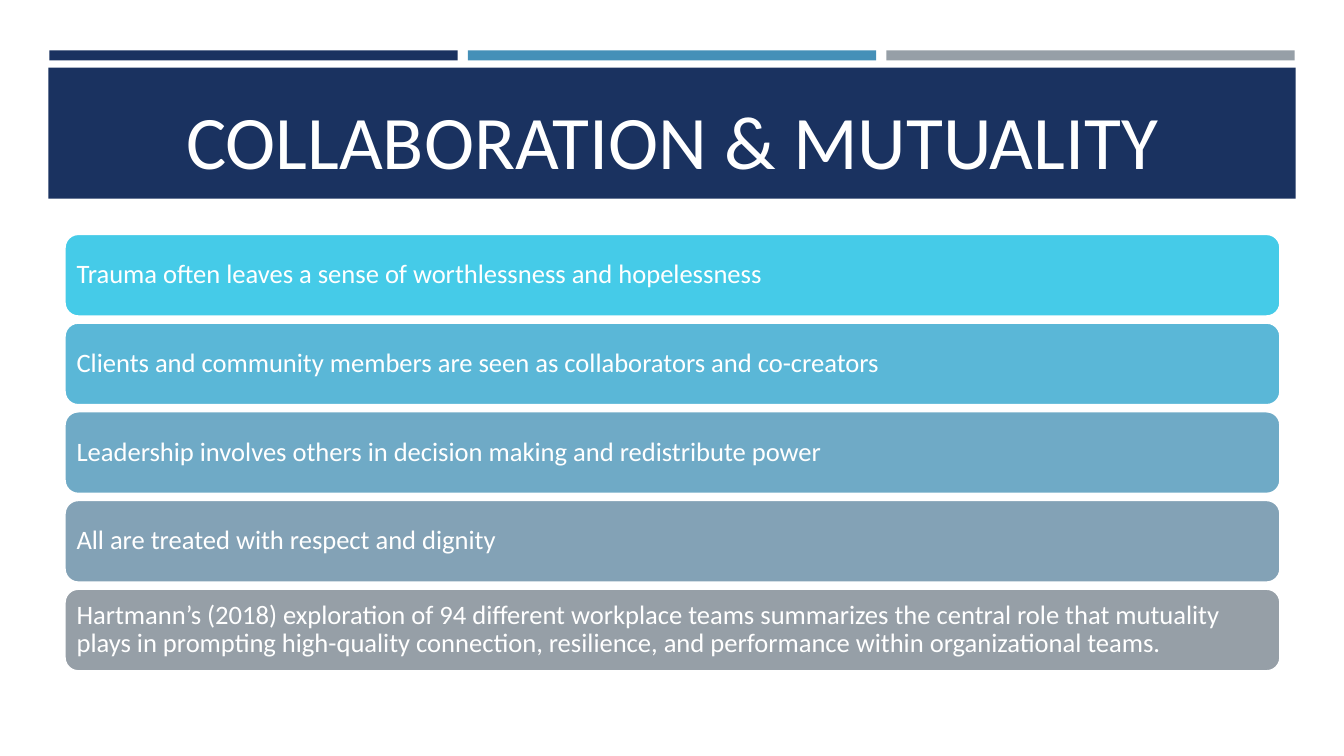
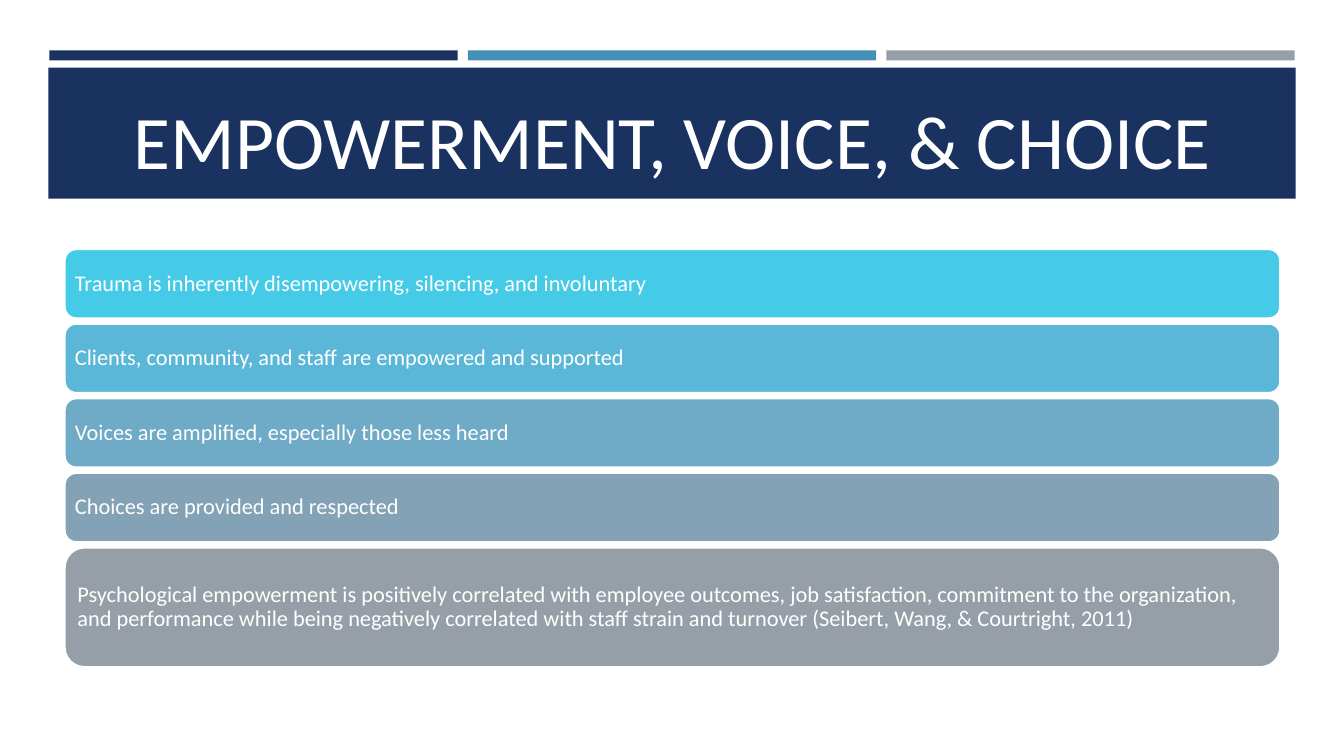
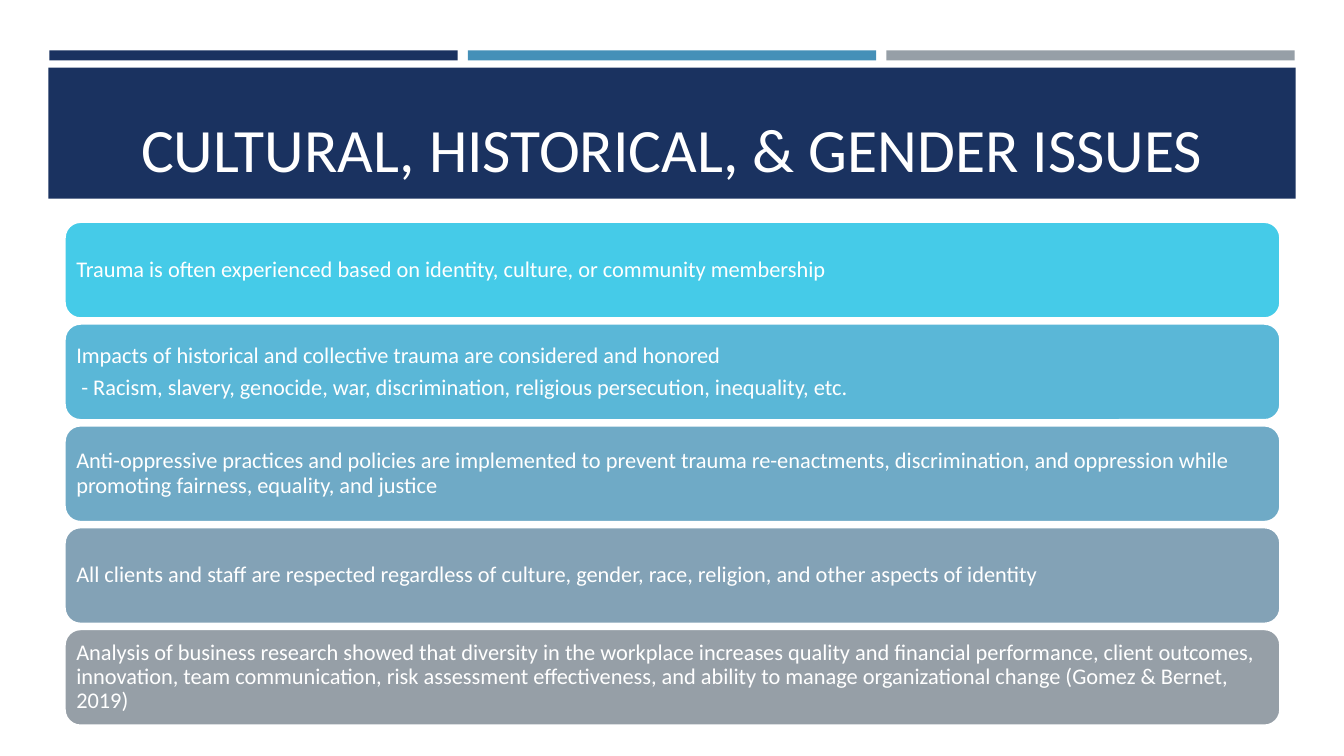
from pptx import Presentation
from pptx.dml.color import RGBColor as Rgb
from pptx.enum.shapes import MSO_SHAPE as Kind
from pptx.enum.text import MSO_ANCHOR as Anchor, MSO_AUTO_SIZE as Fit, PP_ALIGN as Align
from pptx.util import Pt

PX = 9144


class Theme:
    font = "Calibri"
    navy = "1A3260"
    blue = "4590B8"
    gray = "969FA7"
    white = "FFFFFF"
    cards = ["45CBE8", "5AB7D7", "6FAAC6", "83A2B6", "969FA7"]
    big = 54
    mid = 44
    text = 19
    small = 16


def draw(slide, kind, box, fill):
    shape = slide.shapes.add_shape(kind, *[n * PX for n in box])
    shape.shadow.inherit = False
    shape.fill.solid()
    shape.fill.fore_color.rgb = Rgb.from_string(fill)
    shape.line.fill.background()
    return shape


def style(part, size):
    part.font.name = Theme.font
    part.font.size = Pt(size)
    part.font.color.rgb = Rgb.from_string(Theme.white)


pages = [
    dict(
        title="COLLABORATION & MUTUALITY", head=Theme.big, size=Theme.text,
        top=232, gap=6, pad=8, tall=[82] * 5,
        cards=[
            "Trauma often leaves a sense of worthlessness and hopelessness",
            "Clients and community members are seen as collaborators and co-creators",
            "Leadership involves others in decision making and redistribute power",
            "All are treated with respect and dignity",
            "Hartmann’s (2018) exploration of 94 different workplace teams summarizes "
            "the central role that mutuality plays in prompting high-quality connection, "
            "resilience, and performance within organizational teams.",
        ],
    ),
    dict(
        title="EMPOWERMENT, VOICE, & CHOICE", head=Theme.big, size=Theme.small,
        top=247, gap=5, pad=7, tall=[69] * 4 + [119],
        cards=[
            "Trauma is inherently disempowering, silencing, and involuntary",
            "Clients, community, and staff are empowered and supported",
            "Voices are amplified, especially those less heard",
            "Choices are provided and respected",
            "Psychological empowerment is positively correlated with employee outcomes, "
            "job satisfaction, commitment to the organization, and performance while being "
            "negatively correlated with staff strain and turnover "
            "(Seibert, Wang, & Courtright, 2011)",
        ],
    ),
    dict(
        title="CULTURAL, HISTORICAL, & GENDER ISSUES", head=Theme.mid, size=Theme.small,
        top=220, gap=5, pad=7, tall=[96] * 5,
        cards=[
            "Trauma is often experienced based on identity, culture, or community membership",
            "Impacts of historical and collective trauma are considered and honored\n"
            " - Racism, slavery, genocide, war, discrimination, religious persecution, "
            "inequality, etc.",
            "Anti-oppressive practices and policies are implemented to prevent trauma "
            "re-enactments, discrimination, and oppression while promoting fairness, "
            "equality, and justice",
            "All clients and staff are respected regardless of culture, gender, race, "
            "religion, and other aspects of identity",
            "Analysis of business research showed that diversity in the workplace increases "
            "quality and financial performance, client outcomes, innovation, team "
            "communication, risk assessment effectiveness, and ability to manage "
            "organizational change (Gomez & Bernet, 2019)",
        ],
    ),
]

deck = Presentation()
deck.slide_width = 1333 * PX
deck.slide_height = 750 * PX
layout = deck.slide_layouts[5]

for hold in list(layout.placeholders):
    if hold.placeholder_format.idx:
        hold.element.getparent().remove(hold.element)
    else:
        hold.left, hold.top, hold.width, hold.height = [n * PX for n in (64, 77, 1206, 111)]
        hold.text_frame.vertical_anchor = Anchor.BOTTOM
        hold.text_frame.auto_size = Fit.NONE

slides = [deck.slides.add_slide(layout) for page in pages]

bands = [
    draw(slides[0], Kind.RECTANGLE, (49 + 415 * i, 50, 405, 10), fill)
    for i, fill in enumerate([Theme.navy, Theme.blue, Theme.gray])
]
bands.append(draw(slides[0], Kind.RECTANGLE, (48, 67, 1237, 130), Theme.navy))
for i, band in enumerate(bands):
    layout.element.cSld.spTree.insert(2 + i, band.element)

for slide, page in zip(slides, pages):
    title = slide.shapes.title.text_frame
    title.text = page["title"]
    title.paragraphs[0].alignment = Align.CENTER
    style(title.paragraphs[0].runs[0], page["head"])

    top = page["top"]
    for text, fill, tall in zip(page["cards"], Theme.cards, page["tall"]):
        card = draw(slide, Kind.ROUNDED_RECTANGLE, (64, top, 1206, tall), fill)
        card.line.color.rgb = Rgb.from_string(Theme.white)
        card.line.width = Pt(1.75)
        frame = card.text_frame
        frame.word_wrap = True
        frame.vertical_anchor = Anchor.MIDDLE
        pad = page["pad"] * PX
        frame.margin_left = frame.margin_right = pad
        frame.margin_top = frame.margin_bottom = pad
        frame.text = text
        for para in frame.paragraphs:
            para.alignment = Align.LEFT
            para.line_spacing = 0.9
            para.space_after = Pt(page["size"] * 0.35)
            style(para.runs[0], page["size"])
        top += tall + page["gap"]

deck.save("out.pptx")
